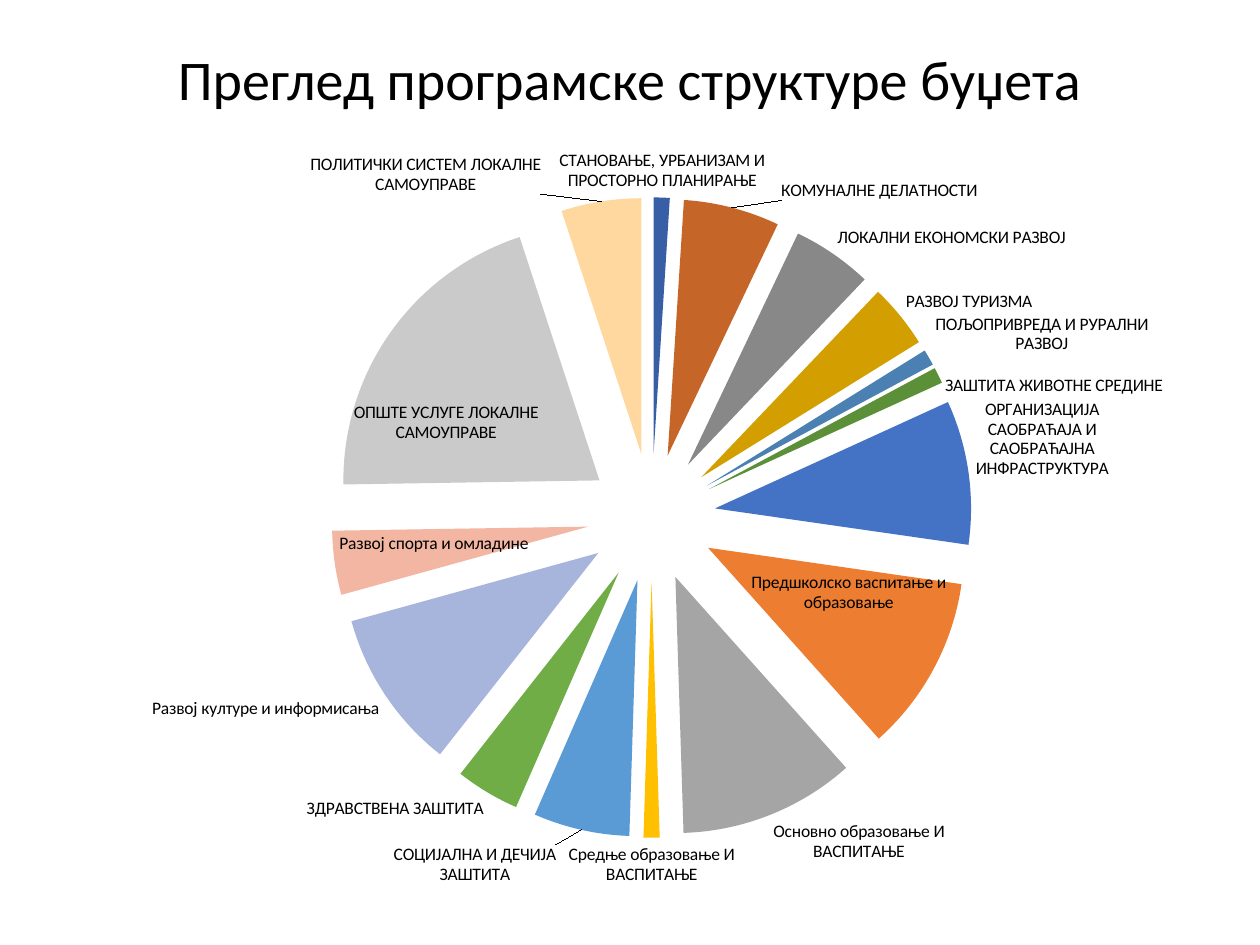
"""Build a slide with an exploded pie chart of the budget's programme structure."""
from pptx import Presentation
from pptx.chart.data import CategoryChartData
from pptx.dml.color import RGBColor
from pptx.enum.chart import XL_CHART_TYPE, XL_LABEL_POSITION
from pptx.enum.text import MSO_ANCHOR, PP_ALIGN
from pptx.oxml import parse_xml
from pptx.oxml.ns import nsdecls
from pptx.util import Pt

TITLE = "Преглед програмске структуре буџета"
FONT = "Calibri"
PROGRAMMES = [
    ("СТАНОВАЊЕ, УРБАНИЗАМ И ПРОСТОРНО ПЛАНИРАЊЕ", 1, "385FA6"),
    ("КОМУНАЛНЕ ДЕЛАТНОСТИ", 6, "C56628"),
    ("ЛОКАЛНИ ЕКОНОМСКИ РАЗВОЈ", 5, "888888"),
    ("РАЗВОЈ ТУРИЗМА", 4, "D29E00"),
    ("ПОЉОПРИВРЕДА И РУРАЛНИ РАЗВОЈ", 1, "4A80B2"),
    ("ЗАШТИТА ЖИВОТНЕ СРЕДИНЕ", 1, "5B9039"),
    ("ОРГАНИЗАЦИЈА САОБРАЋАЈА И САОБРАЋАЈНА ИНФРАСТРУКТУРА", 9, "4472C4"),
    ("Предшколско васпитање и образовање", 11, "ED7D31"),
    ("Основно образовање И ВАСПИТАЊЕ", 11, "A5A5A5"),
    ("Средње образовање И ВАСПИТАЊЕ", 1, "FFC000"),
    ("СОЦИЈАЛНА И ДЕЧИЈА ЗАШТИТА", 6, "5B9BD5"),
    ("ЗДРАВСТВЕНА ЗАШТИТА", 4, "70AD47"),
    ("Развој културе и информисања", 10, "A7B4DC"),
    ("Развој спорта и омладине", 4, "F2B6A3"),
    ("ОПШТЕ УСЛУГЕ ЛОКАЛНЕ САМОУПРАВЕ", 20, "CACACA"),
    ("ПОЛИТИЧКИ СИСТЕМ ЛОКАЛНЕ САМОУПРАВЕ", 5, "FFD8A0"),
]
LABEL_SHIFTS = {1: (0.04, 0), 5: (0, 0.03), 6: (0, 0.01), 7: (-0.16, -0.13),
                10: (-0.02, 0.01), 13: (0.17, -0.04), 14: (0.13, 0.15),
                15: (-0.05, 0)}
PLOT = {"x": 0.25, "y": 0.08, "w": 0.55, "h": 0.84}
EXPLOSION = 25


def rgb(color):
    """Return the colour for a hex string."""
    return RGBColor.from_string(color)


def style_font(font, size):
    """Set the common typeface and colour at the given size."""
    font.name, font.size = FONT, Pt(size)
    font.color.rgb = rgb("000000")


def layout_xml(places, prefix=""):
    """Return a manual chart layout element."""
    parts = "".join(f'<c:{k} val="{v}"/>' for k, v in places.items())
    return parse_xml(f'<c:layout {nsdecls("c")}><c:manualLayout>{prefix}{parts}'
                     '</c:manualLayout></c:layout>')


def add_title(slide):
    """Add the slide title."""
    tf = slide.shapes.add_textbox(Pt(90), Pt(24), Pt(540), Pt(44)).text_frame
    tf.word_wrap = True
    tf.vertical_anchor = MSO_ANCHOR.BOTTOM
    p = tf.paragraphs[0]
    p.text, p.alignment, p.line_spacing = TITLE, PP_ALIGN.CENTER, 0.9
    style_font(p.font, 32)


def add_pie(slide):
    """Add the pie chart with its category labels."""
    data = CategoryChartData(number_format="#,##0")
    data.categories = [name for name, _, _ in PROGRAMMES]
    data.add_series("Series 1", [value for _, value, _ in PROGRAMMES])
    chart = slide.shapes.add_chart(XL_CHART_TYPE.PIE, Pt(18), Pt(78), Pt(675),
                                   Pt(435.6), data).chart
    chart.has_legend = chart.has_title = False
    style_font(chart.font, 10)
    plot = chart.plots[0]
    plot.vary_by_categories = True
    series = plot.series[0]
    for i, (_, _, color) in enumerate(PROGRAMMES):
        fill = series.points[i].format.fill
        fill.solid()
        fill.fore_color.rgb = rgb(color)
    ser = series._element
    ser.find("{*}dPt").addprevious(
        parse_xml(f'<c:explosion {nsdecls("c")} val="{EXPLOSION}"/>'))

    labels = series.data_labels
    labels.show_category_name, labels.show_value = True, False
    labels.position = XL_LABEL_POSITION.OUTSIDE_END
    style_font(labels.font, 10)
    for i in LABEL_SHIFTS:
        label = series.points[i].data_label
        style_font(label.font, 10)
        label.position = XL_LABEL_POSITION.OUTSIDE_END
    for d in ser.findall("{*}dLbls/{*}dLbl"):
        idx = d.find("{*}idx")
        dx, dy = LABEL_SHIFTS[int(idx.get("val"))]
        idx.addnext(layout_xml({"x": dx, "y": dy}))
        d.find("{*}showVal").set("val", "0")
        d.find("{*}showCatName").set("val", "1")

    area = plot._element.getparent()
    for old in area.findall("{*}layout"):
        area.remove(old)
    modes = ('<c:layoutTarget val="inner"/><c:xMode val="edge"/>'
             '<c:yMode val="edge"/>')
    area.insert(0, layout_xml(PLOT, modes))


def main():
    """Build and save the presentation."""
    prs = Presentation()
    prs.slide_width, prs.slide_height = Pt(720), Pt(540)
    slide = prs.slides.add_slide(prs.slide_layouts[6])
    add_title(slide)
    add_pie(slide)
    prs.save("out.pptx")


if __name__ == "__main__":
    main()
